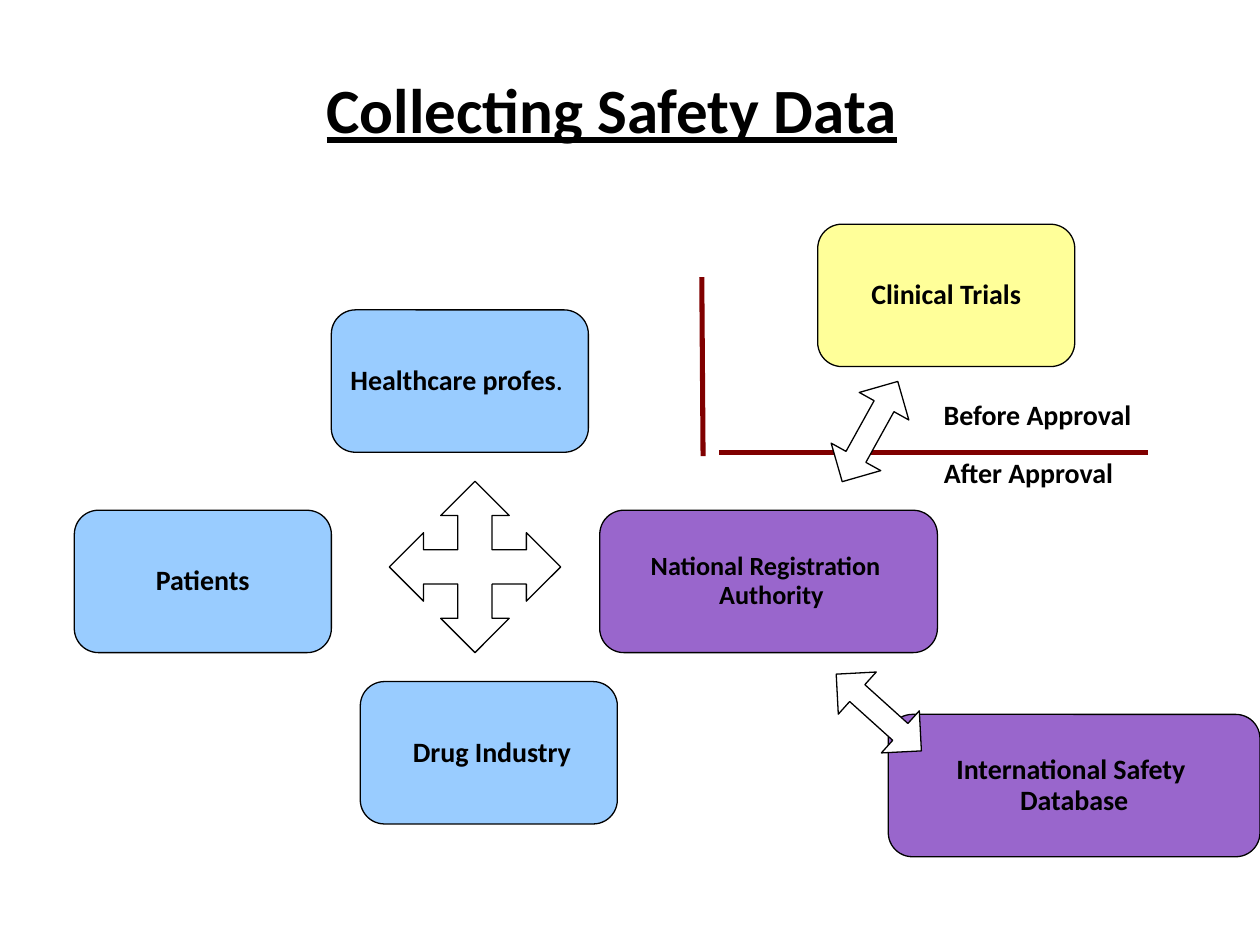
from pptx import Presentation
from pptx.dml.color import RGBColor
from pptx.enum import shapes, text
from pptx.oxml.ns import qn
from pptx.util import Inches, Pt
from lxml import etree

COLORS = {
    "black": "000000", "white": "FFFFFF", "blue": "99CCFF",
    "purple": "9966CC", "yellow": "FFFF99", "maroon": "800000",
}
FONT = "Calibri"
BOX_WIDTH, BOX_HEIGHT = 2.04, 1.13
LINE_SPACING = 0.93

TITLE = "Collecting Safety Data"
# left, top, width, fill, font size, lines of text
BOXES = [
    (2.86, 5.41, BOX_WIDTH, "blue", 16, [" Drug Industry"]),
    (0.59, 4.05, BOX_WIDTH, "blue", 16, ["Patients"]),
    (4.76, 4.05, 2.68, "purple", 15, ["National Registration ", " Authority"]),
    (7.05, 5.67, 2.95, "purple", 16, ["International Safety ", "Database"]),
    (2.63, 2.46, BOX_WIDTH, "blue", 16, ["Healthcare profes", ]),
    (6.49, 1.78, BOX_WIDTH, "yellow", 16, ["Clinical Trials"]),
]
PLAIN_ENDINGS = {"Healthcare profes": ". "}
# start x, start y, end x, end y
DIVIDERS = [(5.57, 2.2, 5.58, 3.62), (5.71, 3.59, 9.11, 3.59)]
# left, top, width, text
STAGE_LABELS = [
    (7.4, 3.14, 1.83, "Before Approval"),
    (7.4, 3.6, 1.81, "After Approval"),
]
# kind, left, top, width, height, rotation, adjustments
QUAD, DOUBLE = shapes.MSO_SHAPE.QUAD_ARROW, shapes.MSO_SHAPE.UP_DOWN_ARROW
QUAD_ARROW = (QUAD, 3.09, 3.82, 1.36, 1.36, 0, (0.2, 0.2, 0.2))
DOUBLE_ARROWS = [
    (DOUBLE, 6.68, 2.97, 0.45, 0.91, 29, (0.5, 0.4)),
    (DOUBLE, 6.75, 5.2, 0.45, 0.91, 312, (0.5, 0.4)),
]


def color(name):
    return RGBColor.from_string(COLORS[name])


def style_span(span, size, bold=True):
    span.font.name = FONT
    span.font.size = Pt(size)
    span.font.bold = bold
    span.font.color.rgb = color("black")


def set_frame(frame, margins, anchor, wrap):
    frame.margin_left = frame.margin_right = Inches(margins[0])
    frame.margin_top = frame.margin_bottom = Inches(margins[1])
    frame.vertical_anchor = anchor
    frame.word_wrap = wrap


def write_lines(frame, lines, size, align, spacing=LINE_SPACING):
    frame.text = "\n".join(lines)
    for para in frame.paragraphs:
        para.alignment = align
        para.line_spacing = spacing
        style_span(para.runs[0], size)
        if para.text in PLAIN_ENDINGS:
            span = para.add_run()
            span.text = PLAIN_ENDINGS[para.runs[0].text]
            style_span(span, size, bold=False)


def add_outlined(page, kind, left, top, width, height, fill):
    shape = page.shapes.add_shape(
        kind, Inches(left), Inches(top), Inches(width), Inches(height))
    shape.shadow.inherit = False
    shape.fill.solid()
    shape.fill.fore_color.rgb = color(fill)
    shape.line.color.rgb = color("black")
    shape.line.width = Pt(0.75)
    return shape


def add_box(page, left, top, width, fill, size, lines):
    box = add_outlined(page, shapes.MSO_SHAPE.ROUNDED_RECTANGLE,
                       left, top, width, BOX_HEIGHT, fill)
    box.adjustments[0] = 0.17
    set_frame(box.text_frame, (0.09, 0.04), text.MSO_ANCHOR.MIDDLE, False)
    write_lines(box.text_frame, lines, size, text.PP_ALIGN.CENTER)


def add_arrow(page, kind, left, top, width, height, rotation, adjustments):
    arrow = add_outlined(page, kind, left, top, width, height, "white")
    arrow.rotation = rotation
    for index, value in enumerate(adjustments):
        arrow.adjustments[index] = value


def add_divider(page, *ends):
    line = page.shapes.add_connector(
        shapes.MSO_CONNECTOR.STRAIGHT, *[Inches(end) for end in ends])
    line.line.color.rgb = color("maroon")
    line.line.width = Pt(2.89)
    etree.SubElement(line._element.spPr, qn("a:effectLst"))


def add_label(page, left, top, width, wording):
    label = page.shapes.add_textbox(
        Inches(left), Inches(top), Inches(width), Inches(0.35))
    set_frame(label.text_frame, (0.09, 0.04), text.MSO_ANCHOR.TOP, True)
    write_lines(label.text_frame, [wording], 16, text.PP_ALIGN.LEFT)


def add_title(page):
    title = page.shapes.add_textbox(
        Inches(0.2), Inches(0.28), Inches(9.31), Inches(1.16))
    set_frame(title.text_frame, (0, 0), text.MSO_ANCHOR.MIDDLE, True)
    write_lines(title.text_frame, [TITLE], 36, text.PP_ALIGN.CENTER, 1.0)
    title.text_frame.paragraphs[0].runs[0].font.underline = True


def main():
    deck = Presentation()
    deck.slide_width, deck.slide_height = Inches(10), Inches(7.5)
    page = deck.slides.add_slide(deck.slide_layouts[6])
    add_title(page)
    for box in BOXES:
        add_box(page, *box)
    add_arrow(page, *QUAD_ARROW)
    for divider in DIVIDERS:
        add_divider(page, *divider)
    for label in STAGE_LABELS:
        add_label(page, *label)
    for arrow in DOUBLE_ARROWS:
        add_arrow(page, *arrow)
    deck.save("out.pptx")


if __name__ == "__main__":
    main()
